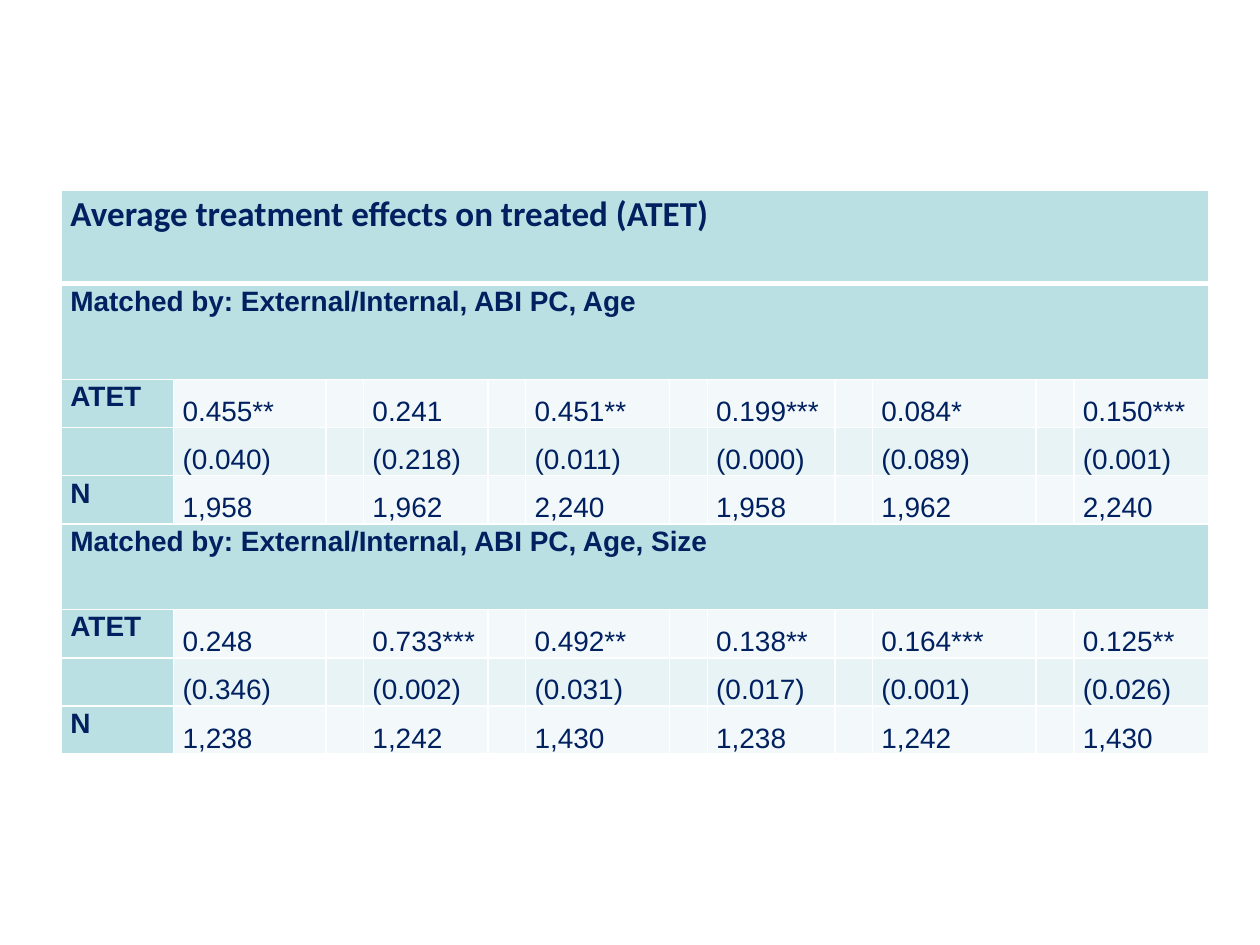
from dataclasses import dataclass

from lxml import etree
from pptx import Presentation
from pptx import util as u
from pptx.dml.color import RGBColor
from pptx.enum import text
from pptx.oxml import ns

NAVY = RGBColor(0x00, 0x20, 0x60)
TEAL = RGBColor(0xBB, 0xE0, 0xE3)
PALE = RGBColor(0xF3, 0xF9, 0xFA)
LIGHT = RGBColor(0xE7, 0xF3, 0xF4)
WHITE = RGBColor(0xFF, 0xFF, 0xFF)

# Column widths and row heights in centimetres
GAP = 0.76
LABEL_WIDTH = 2.26
VALUE_WIDTHS = [3.07, 2.51, 2.9, 2.57, 3.3, 2.72]
TITLE_HEIGHT = 1.88
VALUE_HEIGHT = 0.97


@dataclass
class Panel:
    heading: str
    height: float
    effects: list[str]
    p_values: list[str]
    counts: list[str]


PANELS = [
    Panel(
        "Matched by: External/Internal, ABI PC, Age", 1.93,
        ["0.455**", "0.241", "0.451**", "0.199***", "0.084*", "0.150***"],
        ["(0.040)", "(0.218)", "(0.011)", "(0.000)", "(0.089)", "(0.001)"],
        ["1,958", "1,962", "2,240", "1,958", "1,962", "2,240"],
    ),
    Panel(
        "Matched by: External/Internal, ABI PC, Age, Size", 1.73,
        ["0.248", "0.733***", "0.492**", "0.138**", "0.164***", "0.125**"],
        ["(0.346)", "(0.002)", "(0.031)", "(0.017)", "(0.001)", "(0.026)"],
        ["1,238", "1,242", "1,430", "1,238", "1,242", "1,430"],
    ),
]


def add_border(cell, side: str, points: float) -> None:
    line = etree.SubElement(
        cell._tc.get_or_add_tcPr(), ns.qn(f"a:ln{side}"), w=str(u.Pt(points))
    )
    fill = etree.SubElement(line, ns.qn("a:solidFill"))
    etree.SubElement(fill, ns.qn("a:srgbClr"), val=str(WHITE))


def style_cell(cell, color: RGBColor, top: float = 1, bottom: float = 1) -> None:
    cell.margin_left = cell.margin_right = u.Cm(0.18)
    cell.margin_top = cell.margin_bottom = 0
    # Borders come before the fill in the cell properties
    for side, points in (("L", 1), ("R", 1), ("T", top), ("B", bottom)):
        add_border(cell, side, points)
    cell.fill.solid()
    cell.fill.fore_color.rgb = color


def write(cell, words: str, *, size: int = 16, font: str = "Arial",
          bold: bool = False, anchor=text.MSO_ANCHOR.TOP) -> None:
    cell.vertical_anchor = anchor
    para = cell.text_frame.paragraphs[0]
    para.line_spacing = 1.07
    para.space_after = u.Pt(8)
    span = para.add_run()
    span.text = words
    span.font.size = u.Pt(size)
    span.font.name = font
    span.font.bold = bold
    span.font.color.rgb = NAVY


def add_band(table, row: int, words: str, *, top: float = 1,
             bottom: float = 1, **style) -> None:
    """Fill a full-width row."""
    cells = list(table.rows[row].cells)
    for cell in cells:
        style_cell(cell, TEAL, top, bottom)
    cells[0].merge(cells[-1])
    write(cells[0], words, bold=True, **style)


def add_values(table, row: int, label: str, values: list[str],
               color: RGBColor) -> None:
    """Fill a row label and its values, with a narrow gap between values."""
    for column, cell in enumerate(table.rows[row].cells):
        style_cell(cell, color if column else TEAL)
    if label:
        write(table.cell(row, 0), label, bold=True)
    for index, value in enumerate(values):
        write(table.cell(row, 2 * index + 1), value, anchor=text.MSO_ANCHOR.BOTTOM)


def main() -> None:
    deck = Presentation()
    deck.slide_width, deck.slide_height = u.Cm(25.4), u.Cm(19.05)
    page = deck.slides.add_slide(deck.slide_layouts[6])

    # Table grid
    widths = [LABEL_WIDTH, VALUE_WIDTHS[0]]
    for width in VALUE_WIDTHS[1:]:
        widths += [GAP, width]
    heights = [TITLE_HEIGHT]
    for panel in PANELS:
        heights += [panel.height] + [VALUE_HEIGHT] * 3
    table = page.shapes.add_table(
        len(heights), len(widths), u.Cm(1.24), u.Cm(3.84),
        u.Cm(sum(widths)), u.Cm(sum(heights)),
    ).table
    table.first_row = table.horz_banding = False
    for column, width in zip(table.columns, widths):
        column.width = u.Cm(width)
    for row, height in zip(table.rows, heights):
        row.height = u.Cm(height)

    # Title row, with a thick line below
    add_band(table, 0, "Average treatment effects on treated (ATET)",
             bottom=3, size=20, font="Calibri")

    # One panel for each matching rule
    for index, panel in enumerate(PANELS):
        start = 1 + 4 * index
        add_band(table, start, panel.heading, top=1 if index else 3)
        add_values(table, start + 1, "ATET", panel.effects, PALE)
        add_values(table, start + 2, "", panel.p_values, LIGHT)
        add_values(table, start + 3, "N", panel.counts, PALE)

    deck.save("out.pptx")


if __name__ == "__main__":
    main()
